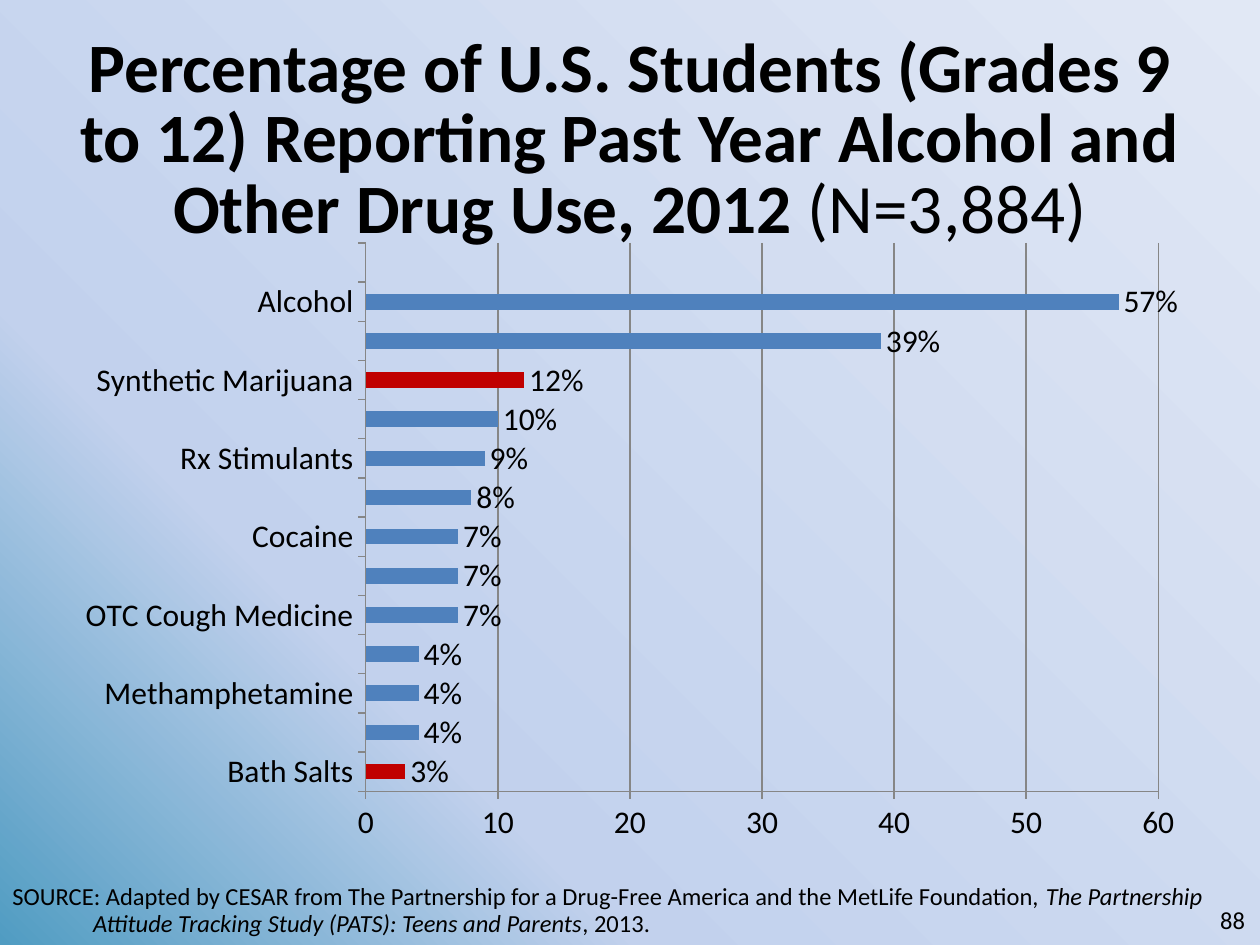
"""Build a slide with a bar chart of past-year alcohol and drug use by students."""
from lxml import etree
from pptx import Presentation
from pptx.chart.data import CategoryChartData
from pptx.dml.color import RGBColor
from pptx.enum.chart import XL_CHART_TYPE, XL_LABEL_POSITION, XL_TICK_MARK
from pptx.enum.text import MSO_ANCHOR, PP_ALIGN
from pptx.oxml.ns import nsdecls, qn
from pptx.util import Inches, Pt

BAR = XL_CHART_TYPE.BAR_CLUSTERED
END = XL_LABEL_POSITION.OUTSIDE_END
OUT, NONE = XL_TICK_MARK.OUTSIDE, XL_TICK_MARK.NONE
TOP, MIDDLE = MSO_ANCHOR.TOP, MSO_ANCHOR.MIDDLE
LEFT, CENTER, RIGHT = PP_ALIGN.LEFT, PP_ALIGN.CENTER, PP_ALIGN.RIGHT

BLACK, BLUE, RED, GRAY = "000000", "4F81BD", "C00000", "868686"
STOPS = [(0, "509CC2"), (29, "C2D1ED"), (100, "E1E8F5")]
DRUGS = [
    ("Bath Salts", 3), ("", 4), ("Methamphetamine", 4), ("", 4),
    ("OTC Cough Medicine", 7), ("", 7), ("Cocaine", 7), ("", 8),
    ("Rx Stimulants", 9), ("", 10), ("Synthetic Marijuana", 12), ("", 39),
    ("Alcohol", 57), ("", None),
]
MARKED = ("Bath Salts", "Synthetic Marijuana")


def color(code):
    return RGBColor.from_string(code)


def inches(box):
    return [Inches(side) for side in box]


class Painter:
    def __init__(self, slide, face="Calibri"):
        self.slide = slide
        self.face = face

    def style(self, font, size):
        font.name = self.face
        font.size = Pt(size)
        font.color.rgb = color(BLACK)

    def backdrop(self, stops):
        fill = self.slide.background.fill
        fill.gradient()
        old = next(self.slide.element.iter(qn("a:gradFill")))
        marks = "".join(
            f'<a:gs pos="{spot * 1000}"><a:srgbClr val="{code}"/></a:gs>'
            for spot, code in stops)
        new = etree.fromstring(
            f'<a:gradFill {nsdecls("a")} rotWithShape="1"><a:gsLst>{marks}</a:gsLst>'
            '<a:path path="circle"><a:fillToRect t="100000" r="100000"/></a:path>'
            '</a:gradFill>')
        old.getparent().replace(old, new)

    def text(self, box, runs, size, align=LEFT, anchor=TOP, space=1.0, hang=0):
        frame = self.slide.shapes.add_textbox(*inches(box)).text_frame
        frame.word_wrap = True
        frame.vertical_anchor = anchor
        para = frame.paragraphs[0]
        if hang:
            props = para._p.get_or_add_pPr()
            props.set("marL", str(Inches(hang)))
            props.set("indent", str(-Inches(hang)))
        para.alignment = align
        para.line_spacing = space
        self.style(para.font, size)
        for words, bold, slant in runs:
            run = para.add_run()
            run.text = words
            run.font.bold = bold
            run.font.italic = slant

    def axis(self, axis):
        axis.major_tick_mark = OUT
        axis.minor_tick_mark = NONE
        axis.format.line.color.rgb = color(GRAY)

    def chart(self, box, rows, marked, size):
        names, values = zip(*rows)
        data = CategoryChartData()
        data.categories = names
        data.add_series("Series 1", values)
        chart = self.slide.shapes.add_chart(BAR, *inches(box), data).chart
        chart.has_legend = False
        chart.has_title = False
        self.style(chart.font, size)
        self.axis(chart.category_axis)
        scale = chart.value_axis
        self.axis(scale)
        scale.minimum_scale, scale.maximum_scale, scale.major_unit = 0, 60, 10
        scale.major_gridlines.format.line.color.rgb = color(GRAY)
        plot = chart.plots[0]
        plot.vary_by_categories = False
        plot.gap_width = 150
        plot.has_data_labels = True
        labels = plot.data_labels
        labels.show_value = True
        labels.position = END
        labels.number_format = '0"%"'
        labels.number_format_is_linked = False
        self.style(labels.font, size)
        bars = plot.series[0]
        bars.format.fill.solid()
        bars.format.fill.fore_color.rgb = color(BLUE)
        for name in marked:
            fill = bars.points[names.index(name)].format.fill
            fill.solid()
            fill.fore_color.rgb = color(RED)


def main():
    deck = Presentation()
    deck.slide_width, deck.slide_height = Inches(10), Inches(7.5)
    paint = Painter(deck.slides.add_slide(deck.slide_layouts[6]))
    paint.backdrop(STOPS)
    paint.text((0.5, 0.5, 9, 1.25), [
        ("Percentage of U.S. Students (Grades 9 to 12) Reporting Past Year "
         "Alcohol and Other Drug Use, 2012 ", True, False),
        ("(N=3,884)", False, False),
    ], 39.6, CENTER, MIDDLE, 0.85)
    paint.chart((0.5, 1.83, 9, 4.95), DRUGS, MARKED, 18)
    paint.text((7.65, 7.1, 2.33, 0.4), [("88", False, False)], 14, RIGHT, MIDDLE)
    paint.text((0, 6.97, 10, 0.53), [
        ("SOURCE: Adapted by CESAR from The Partnership for a Drug-Free America "
         "and the MetLife Foundation, ", False, False),
        ("The Partnership Attitude Tracking Study (PATS): Teens and Parents",
         False, True),
        (", 2013.", False, False),
    ], 14, space=0.9, hang=0.64)
    deck.save("out.pptx")


if __name__ == "__main__":
    main()
